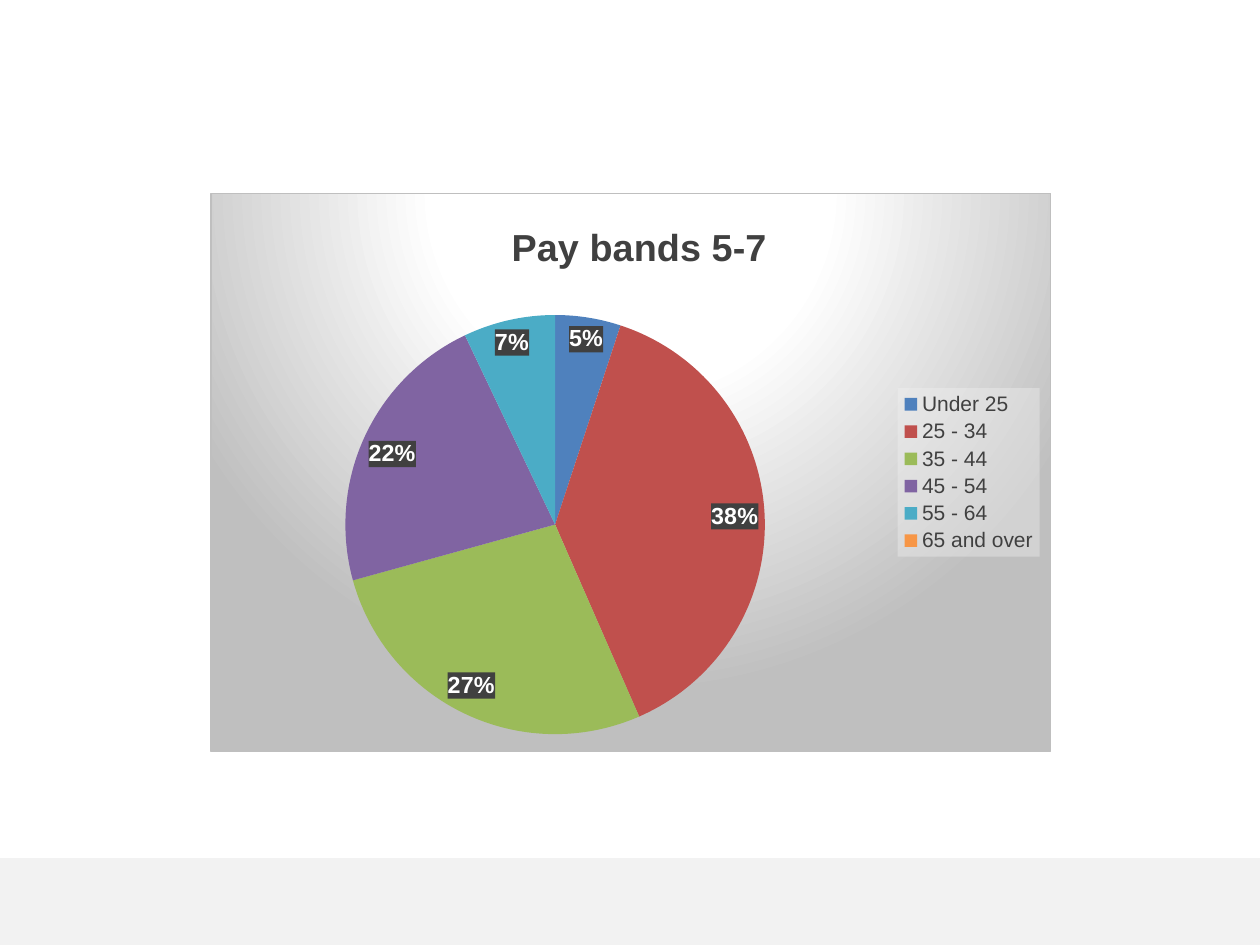
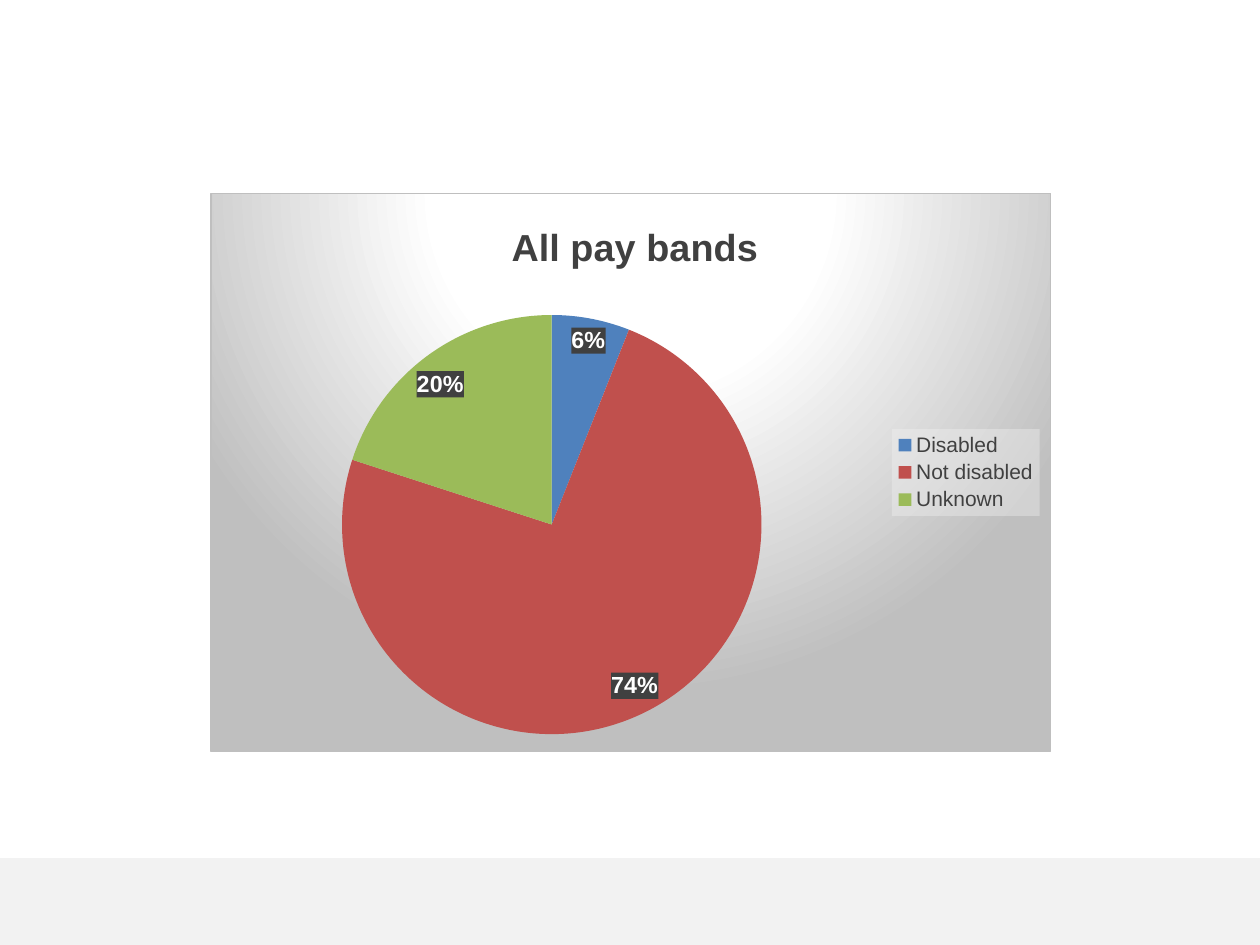
from lxml import etree
from pptx import Presentation
from pptx.chart.data import CategoryChartData
from pptx.dml.color import RGBColor
from pptx.enum import chart as ch, shapes
from pptx.oxml import ns, parse_xml
from pptx.util import Inches, Pt

WHITE = RGBColor(0xFF, 0xFF, 0xFF)
BAND = RGBColor(0xF2, 0xF2, 0xF2)
SILVER = RGBColor(0xBF, 0xBF, 0xBF)
CHARCOAL = RGBColor(0x40, 0x40, 0x40)
BLACK = RGBColor(0, 0, 0)
SLICES = [
    RGBColor(0x4F, 0x81, 0xBD),
    RGBColor(0xC0, 0x50, 0x4D),
    RGBColor(0x9B, 0xBB, 0x59),
    RGBColor(0x80, 0x64, 0xA2),
    RGBColor(0x4B, 0xAC, 0xC6),
    RGBColor(0xF7, 0x96, 0x46),
]
FONT = "Arial"

PIES = [
    ("Pay bands 5-7", 0.16, 0.35,
     {"Under 25": 5, "25 - 34": 38, "35 - 44": 27,
      "45 - 54": 22, "55 - 64": 7, "65 and over": 0}),
    ("All pay bands", 0.156, 0.35,
     {"Disabled": 6, "Not disabled": 74, "Unknown": 20}),
]


def chart_xml(tag, body):
    return parse_xml(f'<c:{tag} {ns.nsdecls("c", "a")}>{body}</c:{tag}>')


def see_through(color, percent):
    return chart_xml("spPr", f'<a:solidFill><a:srgbClr val="{color}">'
                             f'<a:alpha val="{percent * 1000}"/></a:srgbClr></a:solidFill>')


def manual_layout(x, y, w=None, h=None):
    target = '<c:layoutTarget val="inner"/>' if w else ""
    sizes = f'<c:w val="{w}"/><c:h val="{h}"/>' if w else ""
    return chart_xml("layout", f'<c:manualLayout>{target}<c:xMode val="edge"/>'
                               f'<c:yMode val="edge"/><c:x val="{x}"/><c:y val="{y}"/>'
                               f'{sizes}</c:manualLayout>')


def set_layout(parent, layout, index):
    for old in parent.findall(ns.qn("c:layout")):
        parent.remove(old)
    parent.insert(index, layout)


class Deck:
    def __init__(self):
        self.prs = Presentation()
        self.prs.slide_width = Inches(10)
        self.prs.slide_height = Inches(7.5)
        self.s = None

    def slide(self):
        self.s = self.prs.slides.add_slide(self.prs.slide_layouts[6])
        self.band()

    def band(self):
        sp = self.s.shapes.add_shape(shapes.MSO_SHAPE.RECTANGLE, 0, Inches(6.81),
                                     Inches(10), Inches(0.69))
        sp.shadow.inherit = False
        sp.fill.solid()
        sp.fill.fore_color.rgb = BAND
        sp.line.fill.background()

    def style(self, font, size, color, bold=False):
        font.name = FONT
        font.size = Pt(size)
        font.color.rgb = color
        font.bold = bold

    def pie(self, title, pie_x, title_x, shares):
        data = CategoryChartData()
        data.categories = list(shares)
        data.add_series("Series 1", list(shares.values()))
        chart = self.s.shapes.add_chart(ch.XL_CHART_TYPE.PIE, Inches(1.67), Inches(1.53),
                                        Inches(6.67), Inches(4.44), data).chart
        self.style(chart.font, 10, BLACK)
        self.backdrop(chart)
        self.title(chart, title, title_x)
        self.legend(chart)
        plot = chart.plots[0]
        plot.vary_by_categories = True
        set_layout(chart.element.find(".//" + ns.qn("c:plotArea")),
                   manual_layout(pie_x, 0.218, 0.5, 0.751), 0)
        series = plot.series[0]
        for i, color in enumerate(SLICES[:len(shares)]):
            fill = series.points[i].format.fill
            fill.solid()
            fill.fore_color.rgb = color
        self.labels(series, list(shares.values()))

    def backdrop(self, chart):
        stops = "".join(f'<a:gs pos="{pos * 1000}"><a:srgbClr val="{color}"/></a:gs>'
                        for pos, color in ((0, WHITE), (39, WHITE), (100, SILVER)))
        fill = (f'<a:gradFill><a:gsLst>{stops}</a:gsLst><a:path path="circle">'
                '<a:fillToRect l="50000" t="-80000" r="50000" b="180000"/></a:path></a:gradFill>')
        line = (f'<a:ln w="{Pt(0.75)}"><a:solidFill><a:srgbClr val="{SILVER}"/>'
                '</a:solidFill></a:ln>')
        chart.element.find(ns.qn("c:chart")).addnext(chart_xml("spPr", fill + line))

    def title(self, chart, words, x):
        chart.has_title = True
        r = chart.chart_title.text_frame.paragraphs[0].add_run()
        r.text = words
        self.style(r.font, 21.6, CHARCOAL, True)
        set_layout(chart.element.find(".//" + ns.qn("c:title")), manual_layout(x, 0.04), 1)

    def legend(self, chart):
        chart.has_legend = True
        legend = chart.legend
        legend.position = ch.XL_LEGEND_POSITION.RIGHT
        legend.include_in_layout = False
        self.style(legend.font, 12, CHARCOAL)
        node = chart.element.find(".//" + ns.qn("c:legend"))
        node.find(ns.qn("c:overlay")).addnext(see_through(BAND, 39))

    def labels(self, series, values):
        labels = series.data_labels
        labels.show_percentage = True
        labels.show_value = False
        labels.number_format = "0%"
        labels.number_format_is_linked = False
        labels.position = ch.XL_LABEL_POSITION.BEST_FIT
        self.style(labels.font, 13.3, WHITE, True)
        node = series.points[0].format and labels._element
        node.find(ns.qn("c:numFmt")).addnext(see_through(CHARCOAL, 75))
        empty = [i for i, value in enumerate(values) if value == 0]
        for place, i in enumerate(empty):
            hidden = chart_xml("dLbl", f'<c:idx val="{i}"/><c:delete val="1"/>')
            node.insert(place, hidden)
        etree.cleanup_namespaces(node)


def main():
    deck = Deck()
    for pie in PIES:
        deck.slide()
        deck.pie(*pie)
    deck.prs.save("out.pptx")


if __name__ == "__main__":
    main()
